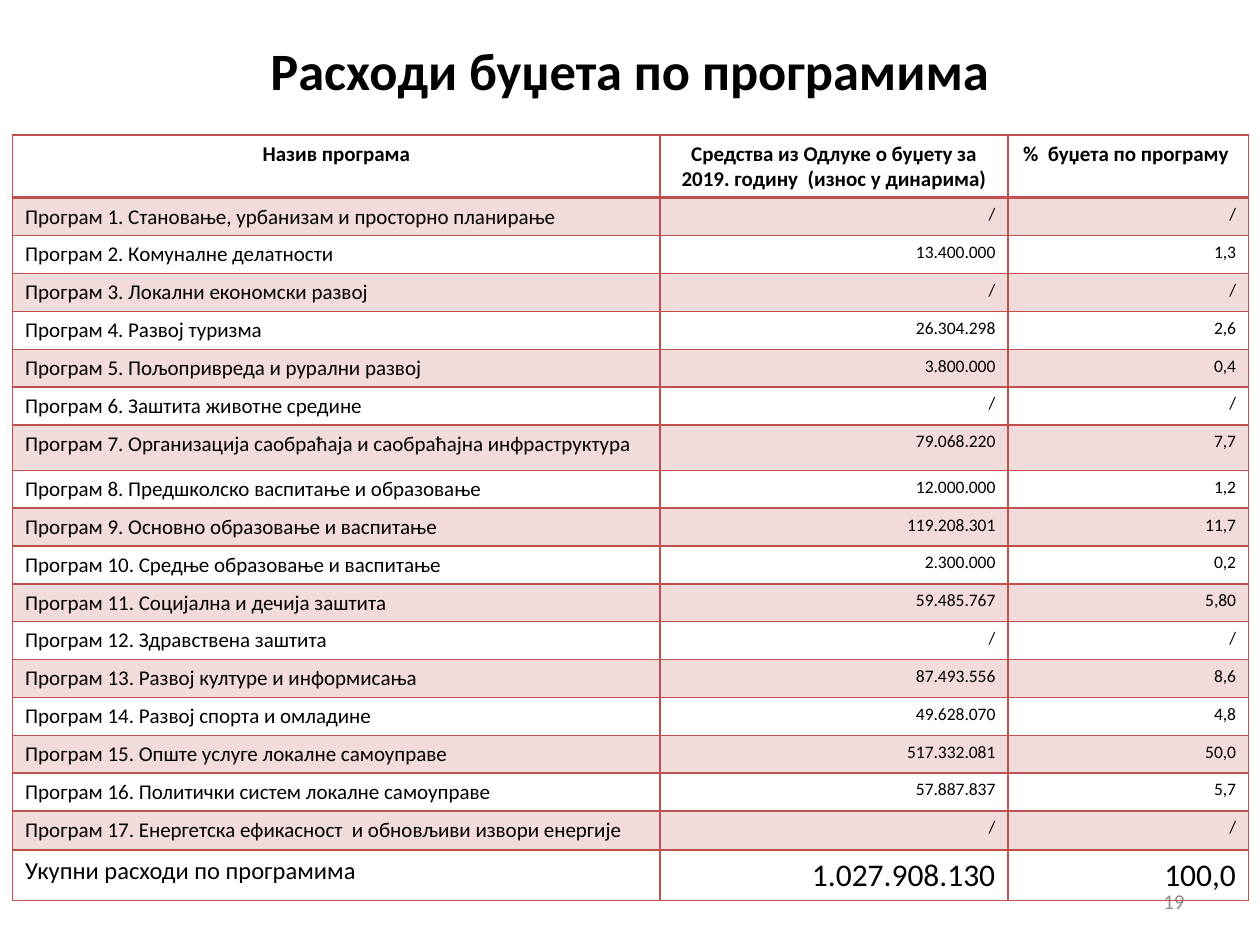
from lxml import etree
from pptx import Presentation, util as u
from pptx.dml.color import RGBColor
from pptx.enum import text as t
from pptx.oxml import ns

THEME = dict(font="Calibri", ink="000000", gray="8C8C8C", line="C0504D",
             band="F2DCDB", title=30, body=12, num=10, sum=14, big=18)
TITLE = "Расходи буџета по програмима"
PAGE = "19"
HEAD = ("Назив програма",
        "Средства из Одлуке о буџету за 2019. годину  (износ у динарима)",
        "%  буџета по програму ")
ITEMS = [
    ("Становање, урбанизам и просторно планирање", "/", "/"),
    ("Комуналне делатности", "13.400.000", "1,3"),
    ("Локални економски развој", "/", "/"),
    ("Развој туризма", "26.304.298", "2,6"),
    ("Пољопривреда и рурални развој", "3.800.000", "0,4"),
    ("Заштита животне средине", "/", "/"),
    ("Организација саобраћаја и саобраћајна инфраструктура", "79.068.220", "7,7"),
    ("Предшколско васпитање и образовање", "12.000.000", "1,2"),
    ("Основно образовање и васпитање", "119.208.301", "11,7"),
    ("Средње образовање и васпитање", "2.300.000", "0,2"),
    ("Социјална и дечија заштита", "59.485.767", "5,80"),
    ("Здравствена заштита", "/", "/"),
    ("Развој културе и информисања", "87.493.556", "8,6"),
    ("Развој спорта и омладине", "49.628.070", "4,8"),
    ("Опште услуге локалне самоуправе", "517.332.081", "50,0"),
    ("Политички систем локалне самоуправе", "57.887.837", "5,7"),
    ("Енергетска ефикасност  и обновљиви извори енергије", "/", "/"),
]
TOTAL = ("Укупни расходи по програмима", "1.027.908.130", "100,0")
WIDE, HIGH = 10, 7.5
COLS = (5.14, 2.76, 1.91)
ROW, TALL = 0.29, {0: 0.49, 7: 0.36, 17: 0.31, 18: 0.39}
ALIGN = dict(l=t.PP_ALIGN.LEFT, c=t.PP_ALIGN.CENTER, r=t.PP_ALIGN.RIGHT)


def write(frame, words, size="body", color="ink", bold=False, align="l"):
    frame.word_wrap = True
    para = frame.paragraphs[0]
    para.alignment = ALIGN[align]
    run = para.add_run()
    run.text = words
    font = run.font
    font.name, font.size, font.bold = THEME["font"], u.Pt(THEME[size]), bold
    font.color.rgb = RGBColor.from_string(THEME[color])


def label(slide, box, words, **look):
    frame = slide.shapes.add_textbox(*map(u.Inches, box)).text_frame
    frame.vertical_anchor = t.MSO_ANCHOR.MIDDLE
    write(frame, words, **look)


def edge(cell, side, width):
    line = etree.SubElement(cell._tc.get_or_add_tcPr(), ns.qn("a:ln" + side),
                            w=str(u.Pt(width)))
    fill = etree.SubElement(line, ns.qn("a:solidFill"))
    etree.SubElement(fill, ns.qn("a:srgbClr"), val=THEME["line"])


def paint(cell, row):
    for side in "LRTB":
        thick = (row, side) in ((0, "B"), (1, "T"))
        edge(cell, side, 2 if thick else 1)
    if row % 2:
        cell.fill.solid()
        cell.fill.fore_color.rgb = RGBColor.from_string(THEME["band"])
    else:
        cell.fill.background()


def style(row, col, last):
    if row == 0:
        return dict(bold=True, align="c")
    if col == 0:
        return dict(size="sum" if row == last else "body")
    return dict(size="big" if row == last else "num", align="r")


def grid(slide):
    names = [(f"Програм {n}. {name}", *rest)
             for n, (name, *rest) in enumerate(ITEMS, 1)]
    rows = [HEAD, *names, TOTAL]
    last = len(rows) - 1
    highs = [TALL.get(n, ROW) for n in range(len(rows))]
    box = (0.1, 1.07, sum(COLS), sum(highs))
    table = slide.shapes.add_table(len(rows), len(COLS), *map(u.Inches, box)).table
    table.first_row = table.horz_banding = False
    for col, width in zip(table.columns, COLS):
        col.width = u.Inches(width)
    for r, (cells, high) in enumerate(zip(rows, highs)):
        table.rows[r].height = u.Inches(high)
        for c, words in enumerate(cells):
            cell = table.cell(r, c)
            write(cell.text_frame, words, **style(r, c, last))
            paint(cell, r)


def main():
    deck = Presentation()
    deck.slide_width, deck.slide_height = u.Inches(WIDE), u.Inches(HIGH)
    slide = deck.slides.add_slide(deck.slide_layouts[6])
    label(slide, (0.74, 0.13, 8.52, 0.85), TITLE, size="title", bold=True, align="c")
    label(slide, (7.17, 6.95, 2.33, 0.4), PAGE, color="gray", align="r")
    grid(slide)
    deck.save("out.pptx")


if __name__ == "__main__":
    main()
